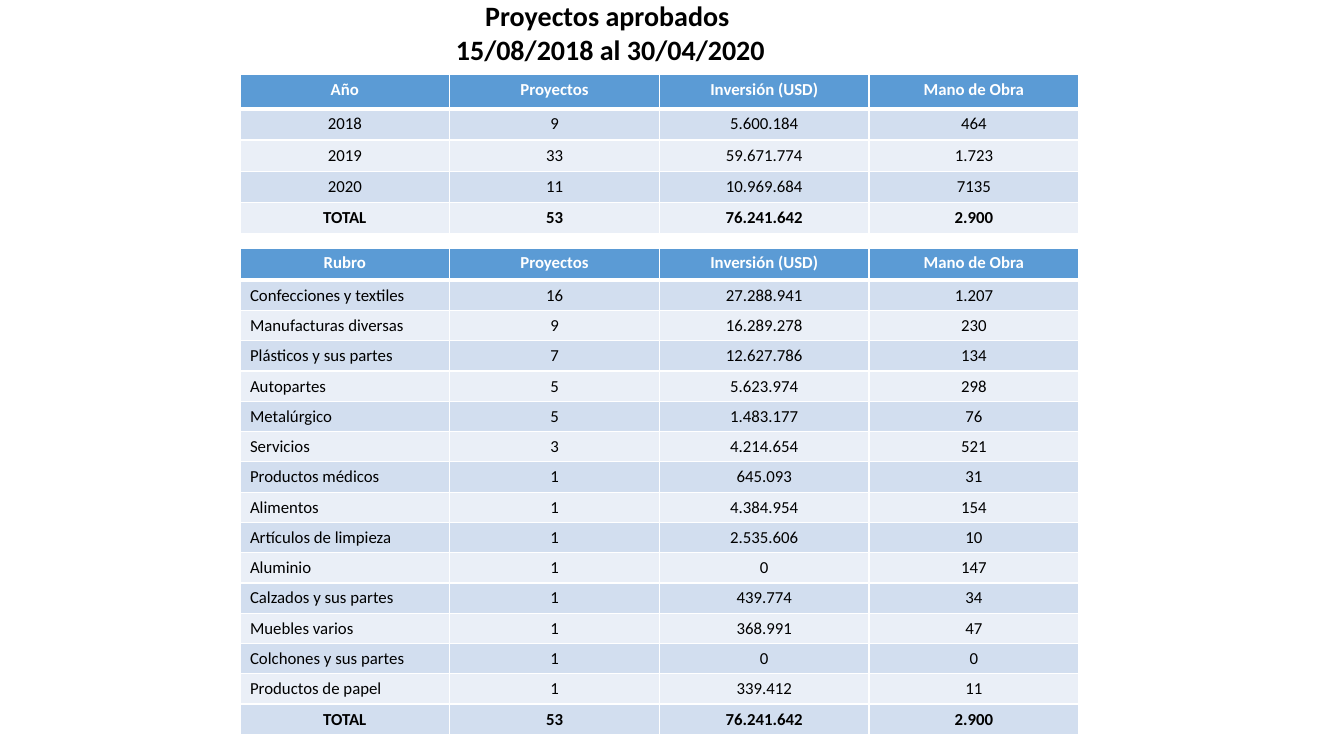
from dataclasses import dataclass

from lxml.etree import SubElement
from pptx import Presentation
from pptx.dml.color import RGBColor
from pptx.enum.text import MSO_AUTO_SIZE, PP_ALIGN
from pptx.oxml.ns import qn
from pptx.util import Inches, Pt


@dataclass(frozen=True)
class Theme:
    font: str = "Calibri"
    title_size: int = 20
    table_size: int = 12
    text: str = "000000"
    header_text: str = "FFFFFF"
    header_fill: str = "5B9BD5"
    band_fills: tuple = ("D2DEEF", "EAEFF7")
    border: str = "FFFFFF"
    border_width: int = 1
    header_border_width: int = 3


class SlideBuilder:
    def __init__(self, slide, theme):
        self.slide = slide
        self.theme = theme

    def style_paragraph(self, paragraph, size, color, bold, alignment=PP_ALIGN.CENTER):
        paragraph.alignment = alignment
        paragraph.font.name = self.theme.font
        paragraph.font.size = Pt(size)
        paragraph.font.bold = bold
        paragraph.font.color.rgb = RGBColor.from_string(color)

    def add_title(self, text, left, top, width, height):
        box = self.slide.shapes.add_textbox(Inches(left), Inches(top), Inches(width), Inches(height))
        frame = box.text_frame
        frame.word_wrap = True
        frame.auto_size = MSO_AUTO_SIZE.SHAPE_TO_FIT_TEXT
        frame.text = text
        for paragraph in frame.paragraphs:
            self.style_paragraph(paragraph, self.theme.title_size, self.theme.text, True)

    def add_borders(self, cell, row_index):
        theme = self.theme
        thick_side = {0: "lnB", 1: "lnT"}.get(row_index)
        properties = cell._tc.get_or_add_tcPr()
        for side in ("lnL", "lnR", "lnT", "lnB"):
            width = theme.header_border_width if side == thick_side else theme.border_width
            line = SubElement(properties, qn(f"a:{side}"), w=str(Pt(width)))
            fill = SubElement(line, qn("a:solidFill"))
            SubElement(fill, qn("a:srgbClr"), val=theme.border)

    def add_table(self, rows, left, top, column_width, header_height, row_height, label_alignment):
        theme = self.theme
        column_count = len(rows[0])
        height = header_height + row_height * (len(rows) - 1)
        table = self.slide.shapes.add_table(
            len(rows), column_count, Inches(left), Inches(top),
            Inches(column_width * column_count), Inches(height),
        ).table
        for column in table.columns:
            column.width = Inches(column_width)
        for row_index, values in enumerate(rows):
            is_header = row_index == 0
            is_total = row_index == len(rows) - 1
            table.rows[row_index].height = Inches(header_height if is_header else row_height)
            fill = theme.header_fill if is_header else theme.band_fills[(row_index - 1) % 2]
            color = theme.header_text if is_header else theme.text
            for column_index, value in enumerate(values):
                cell = table.cell(row_index, column_index)
                cell.text = value
                is_label = column_index == 0 and not (is_header or is_total)
                alignment = label_alignment if is_label else PP_ALIGN.CENTER
                self.style_paragraph(
                    cell.text_frame.paragraphs[0], theme.table_size, color, is_header or is_total, alignment
                )
                self.add_borders(cell, row_index)
                cell.fill.solid()
                cell.fill.fore_color.rgb = RGBColor.from_string(fill)


MEASURES = ("Proyectos", "Inversión (USD)", "Mano de Obra")
TOTAL = ("TOTAL", "53", "76.241.642", "2.900")
PROJECTS_BY_YEAR = [
    ("Año", *MEASURES),
    ("2018", "9", "5.600.184", "464"),
    ("2019", "33", "59.671.774", "1.723"),
    ("2020", "11", "10.969.684", "7135"),
    TOTAL,
]
PROJECTS_BY_SECTOR = [
    ("Rubro", *MEASURES),
    ("Confecciones y textiles", "16", "27.288.941", "1.207"),
    ("Manufacturas diversas", "9", "16.289.278", "230"),
    ("Plásticos y sus partes", "7", "12.627.786", "134"),
    ("Autopartes", "5", "5.623.974", "298"),
    ("Metalúrgico", "5", "1.483.177", "76"),
    ("Servicios", "3", "4.214.654", "521"),
    ("Productos médicos", "1", "645.093", "31"),
    ("Alimentos", "1", "4.384.954", "154"),
    ("Artículos de limpieza", "1", "2.535.606", "10"),
    ("Aluminio", "1", "0", "147"),
    ("Calzados y sus partes", "1", "439.774", "34"),
    ("Muebles varios", "1", "368.991", "47"),
    ("Colchones y sus partes", "1", "0", "0"),
    ("Productos de papel", "1", "339.412", "11"),
    TOTAL,
]
TABLE_LEFT = 2.38
COLUMN_WIDTH = 2.08


def main():
    presentation = Presentation()
    presentation.slide_width = Inches(13.33)
    presentation.slide_height = Inches(7.5)
    slide = presentation.slides.add_slide(presentation.slide_layouts[6])
    builder = SlideBuilder(slide, Theme())
    builder.add_title("Proyectos aprobados \n15/08/2018 al 30/04/2020", 3.5, -0.06, 5.11, 0.77)
    builder.add_table(PROJECTS_BY_YEAR, TABLE_LEFT, 0.74, COLUMN_WIDTH, 0.34, 0.31, PP_ALIGN.CENTER)
    builder.add_table(PROJECTS_BY_SECTOR, TABLE_LEFT, 2.46, COLUMN_WIDTH, 0.32, 0.29, PP_ALIGN.LEFT)
    presentation.save("out.pptx")


if __name__ == "__main__":
    main()
